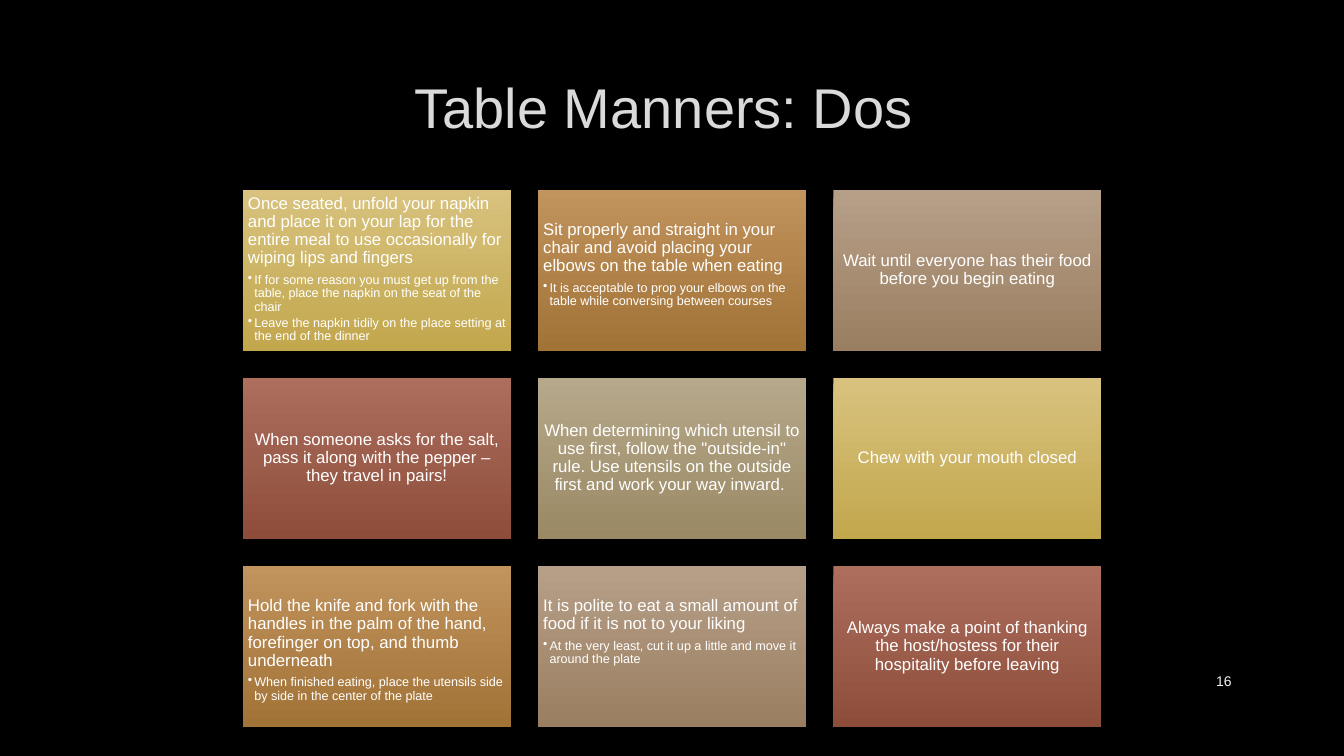
import dataclasses
import typing

import lxml.etree
import pptx
import pptx.dml.color
import pptx.enum.shapes
import pptx.enum.text
import pptx.oxml.ns
import pptx.util

Cm = pptx.util.Cm
Pt = pptx.util.Pt
RGB = pptx.dml.color.RGBColor
Align = pptx.enum.text.PP_ALIGN
Anchor = pptx.enum.text.MSO_ANCHOR

FONT = "Arial"
BLACK = RGB(0x00, 0x00, 0x00)
WHITE = RGB(0xFF, 0xFF, 0xFF)
SILVER = RGB(0xDA, 0xDA, 0xDA)
PALE = RGB(0xF2, 0xF2, 0xF2)

Blend = tuple[RGB, RGB]
GOLD: Blend = (RGB(0xD8, 0xC2, 0x7E), RGB(0xC2, 0xA7, 0x4D))
AMBER: Blend = (RGB(0xC1, 0x93, 0x5D), RGB(0xA1, 0x73, 0x37))
TAN: Blend = (RGB(0xB6, 0x9F, 0x88), RGB(0x9A, 0x7E, 0x61))
RUST: Blend = (RGB(0xAD, 0x6E, 0x5E), RGB(0x8E, 0x4D, 0x3A))
OLIVE: Blend = (RGB(0xB6, 0xA8, 0x8B), RGB(0x9A, 0x89, 0x64))

COLS = 3
LEFT, TOP = Cm(6.12), Cm(4.78)
WIDE, HIGH = Cm(6.76), Cm(4.06)
GAP = Cm(0.68)
INSET = Cm(0.13)
DROP = Cm(0.79)
HANG = Cm(0.16)


@dataclasses.dataclass
class Card:
    blend: Blend
    head: str
    notes: tuple[str, ...] = ()
    inset: int = INSET


CARDS = [
    Card(GOLD, "Once seated, unfold your napkin and place it on your lap for the "
         "entire meal to use occasionally for wiping lips and fingers",
         ("If for some reason you must get up from the table, place the napkin "
          "on the seat of the chair",
          "Leave the napkin tidily on the place setting at the end of the dinner")),
    Card(AMBER, "Sit properly and straight in your chair and avoid placing your "
         "elbows on the table when eating",
         ("It is acceptable to prop your elbows on the table while conversing "
          "between courses",), DROP),
    Card(TAN, "Wait until everyone has their food before you begin eating"),
    Card(RUST, "When someone asks for the salt, pass it along with the pepper – "
         "they travel in pairs!"),
    Card(OLIVE, 'When determining which utensil to use first, follow the "outside-in" '
         "rule. Use utensils on the outside first and work your way inward. "),
    Card(GOLD, "Chew with your mouth closed"),
    Card(AMBER, "Hold the knife and fork with the handles in the palm of the hand, "
         "forefinger on top, and thumb underneath",
         ("When finished eating, place the utensils side by side in the center "
          "of the plate",), DROP),
    Card(TAN, "It is polite to eat a small amount of food if it is not to your liking",
         ("At the very least, cut it up a little and move it around the plate",), DROP),
    Card(RUST, "Always make a point of thanking the host/hostess for their "
         "hospitality before leaving"),
]


def write(para: typing.Any, text: str, size: float, color: RGB,
          align: Align, after: float) -> None:
    para.alignment = align
    para.space_before = Pt(0)
    para.space_after = Pt(after)
    run = para.add_run()
    run.text = text
    run.font.name = FONT
    run.font.size = Pt(size)
    run.font.color.rgb = color


def bullet(para: typing.Any) -> None:
    para.level = 1
    props = para._p.get_or_add_pPr()
    props.set("marL", str(HANG))
    props.set("indent", str(-HANG))
    mark = lxml.etree.SubElement(props, pptx.oxml.ns.qn("a:buChar"))
    mark.set("char", "•")


def draw(slide: typing.Any, card: Card, spot: int) -> None:
    row, col = divmod(spot, COLS)
    box = slide.shapes.add_shape(
        pptx.enum.shapes.MSO_SHAPE.RECTANGLE,
        LEFT + col * (WIDE + GAP), TOP + row * (HIGH + GAP), WIDE, HIGH)
    box.shadow.inherit = False
    box.line.fill.background()
    box.fill.gradient()
    box.fill.gradient_angle = 270
    for stop, place, color in zip(box.fill.gradient_stops, (0, 1), card.blend):
        stop.position = place
        stop.color.rgb = color

    frame = box.text_frame
    frame.word_wrap = True
    frame.margin_left = frame.margin_right = frame.margin_bottom = INSET
    frame.margin_top = card.inset
    frame.vertical_anchor = Anchor.TOP if card.notes else Anchor.MIDDLE
    para = frame.paragraphs[0]
    para.line_spacing = 0.9
    write(para, card.head, 12, WHITE, Align.LEFT if card.notes else Align.CENTER, 4.2)
    for note in card.notes:
        para = frame.add_paragraph()
        para.line_spacing = 0.9
        write(para, note, 9, WHITE, Align.LEFT, 1.4)
        bullet(para)


def main() -> None:
    deck = pptx.Presentation()
    deck.slide_width, deck.slide_height = Cm(33.87), Cm(19.05)
    slide = deck.slides.add_slide(deck.slide_layouts[5])
    slide.background.fill.solid()
    slide.background.fill.fore_color.rgb = BLACK

    title = slide.shapes.title
    title.left, title.top = Cm(2.54), Cm(0.91)
    title.width, title.height = Cm(28.75), Cm(3.51)
    title.text_frame.vertical_anchor = Anchor.MIDDLE
    write(title.text_frame.paragraphs[0], "Table Manners: Dos ", 40, SILVER,
          Align.CENTER, 6)

    for spot, card in enumerate(CARDS):
        draw(slide, card, spot)

    page = slide.shapes.add_textbox(Cm(29.21), Cm(16.66), Cm(2.08), Cm(1.02))
    page.text_frame.word_wrap = True
    page.text_frame.vertical_anchor = Anchor.MIDDLE
    write(page.text_frame.paragraphs[0], "16", 10, PALE, Align.RIGHT, 6)

    deck.save("out.pptx")


if __name__ == "__main__":
    main()
